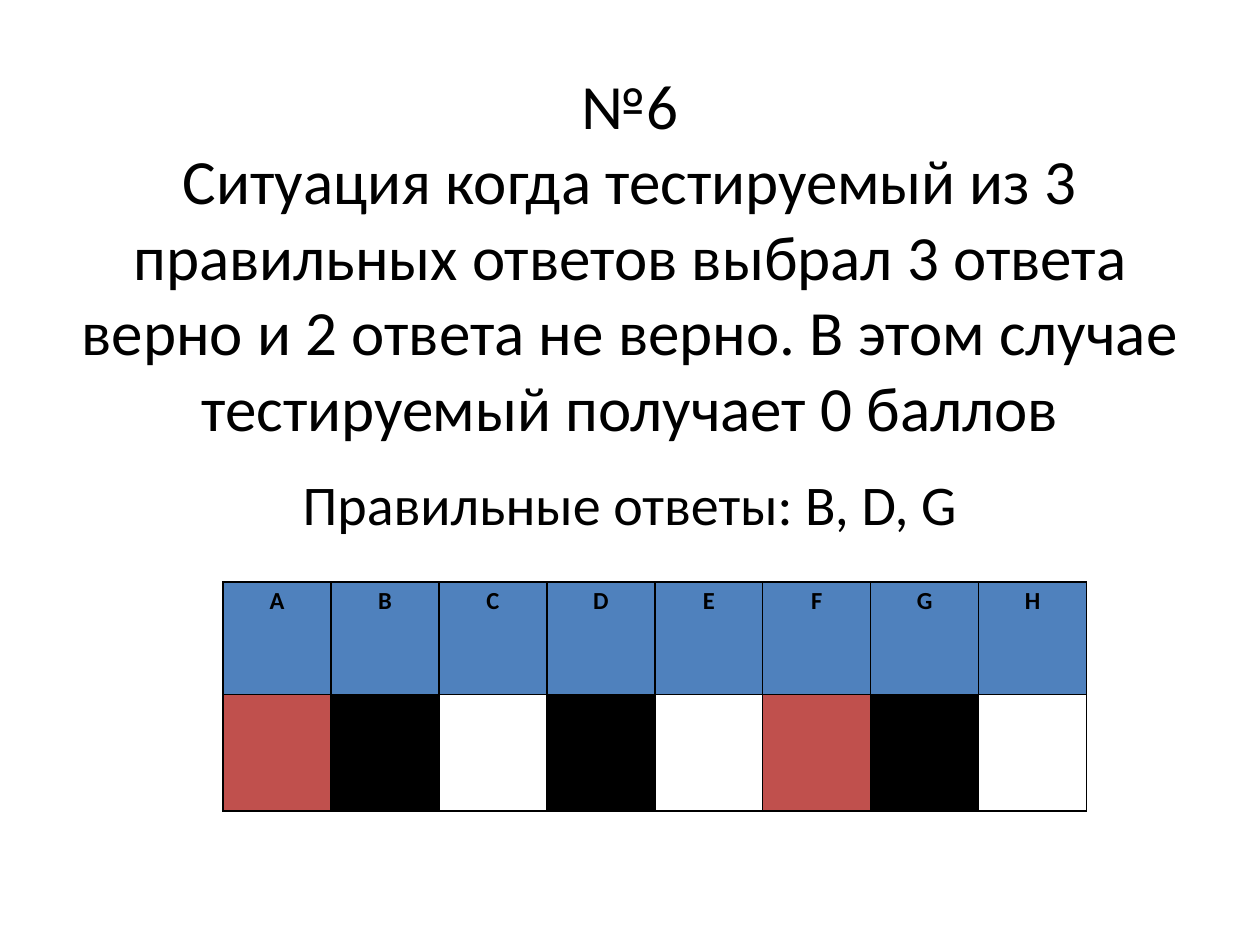
from dataclasses import dataclass
from typing import Optional

from lxml.etree import SubElement
from pptx import Presentation
from pptx.dml.color import RGBColor as RGB
from pptx.enum.text import MSO_ANCHOR as Anchor, PP_ALIGN as Align
from pptx.oxml.ns import qn
from pptx.util import Inches, Pt

COLORS = {"ink": "000000", "header": "4F81BD", "wrong": "C0504D", "right": "000000"}
FONT = "Calibri"
WIDTH, HEIGHT = 10, 7.5


@dataclass
class Caption:
    """A centred text box whose box is given in shares of the slide."""
    text: str
    box: tuple[float, float, float, float]
    size: float
    anchor: Anchor
    before: float = 0


@dataclass
class Answer:
    """One answer column with the colour key of its mark."""
    letter: str
    mark: Optional[str] = None


CAPTIONS = [
    Caption("№6\nСитуация когда тестируемый из 3 правильных ответов выбрал 3 ответа "
            "верно и 2 ответа не верно. В этом случае тестируемый получает 0 баллов",
            (0.05, 0.05, 0.9, 0.44), 36, Anchor.MIDDLE),
    Caption("Правильные ответы: B, D, G",
            (0.095, 0.49, 0.81, 0.4), 32, Anchor.TOP, 6.4),
]
RIGHT, WRONG = "BDG", "AF"
ANSWERS = [Answer(c, "right" if c in RIGHT else "wrong" if c in WRONG else None)
           for c in "ABCDEFGH"]
TABLE_LEFT, TABLE_TOP = 0.177, 0.616
COLUMN = 0.0857
ROWS = (0.119, 0.123)


def across(share: float) -> int:
    """Return a share of the slide width as a length."""
    return Inches(WIDTH * share)


def down(share: float) -> int:
    """Return a share of the slide height as a length."""
    return Inches(HEIGHT * share)


def write(p, text: str, size: float, bold: bool = False) -> None:
    """Fill a paragraph with centred text."""
    p.text = text
    p.alignment = Align.CENTER
    p.font.name, p.font.size, p.font.bold = FONT, Pt(size), bold
    p.font.color.rgb = RGB.from_string(COLORS["ink"])


def add_caption(s, caption: Caption) -> None:
    """Draw one caption on the slide."""
    x, y, w, h = caption.box
    tf = s.shapes.add_textbox(across(x), down(y), across(w), down(h)).text_frame
    tf.word_wrap = True
    tf.vertical_anchor = caption.anchor
    p = tf.paragraphs[0]
    write(p, caption.text, caption.size)
    p.space_before = Pt(caption.before)


def style_cell(cell, color: Optional[str]) -> None:
    """Give a cell its borders, margins and fill."""
    tcPr = cell._tc.get_or_add_tcPr()
    for side in ("lnL", "lnR", "lnT", "lnB"):
        ln = SubElement(tcPr, qn(f"a:{side}"), w=str(Pt(1)))
        fill = SubElement(ln, qn("a:solidFill"))
        SubElement(fill, qn("a:srgbClr"), val=COLORS["ink"])
    cell.margin_left = cell.margin_right = Inches(0.07)
    cell.margin_top = cell.margin_bottom = 0
    if color:
        cell.fill.solid()
        cell.fill.fore_color.rgb = RGB.from_string(COLORS[color])
    else:
        cell.fill.background()


def add_answers(s, answers: list[Answer]) -> None:
    """Draw the answer letters above their marks."""
    table = s.shapes.add_table(len(ROWS), len(answers), across(TABLE_LEFT), down(TABLE_TOP),
                               across(COLUMN * len(answers)), down(sum(ROWS))).table
    table.first_row = table.horz_banding = False
    for row, height in zip(table.rows, ROWS):
        row.height = down(height)
    for i, answer in enumerate(answers):
        table.columns[i].width = across(COLUMN)
        head = table.cell(0, i)
        style_cell(head, "header")
        p = head.text_frame.paragraphs[0]
        write(p, answer.letter, 14, bold=True)
        p.line_spacing = 1.15
        style_cell(table.cell(1, i), answer.mark)


def main() -> None:
    """Build and save the slide."""
    prs = Presentation()
    prs.slide_width, prs.slide_height = Inches(WIDTH), Inches(HEIGHT)
    s = prs.slides.add_slide(prs.slide_layouts[6])
    for caption in CAPTIONS:
        add_caption(s, caption)
    add_answers(s, ANSWERS)
    prs.save("out.pptx")


if __name__ == "__main__":
    main()
